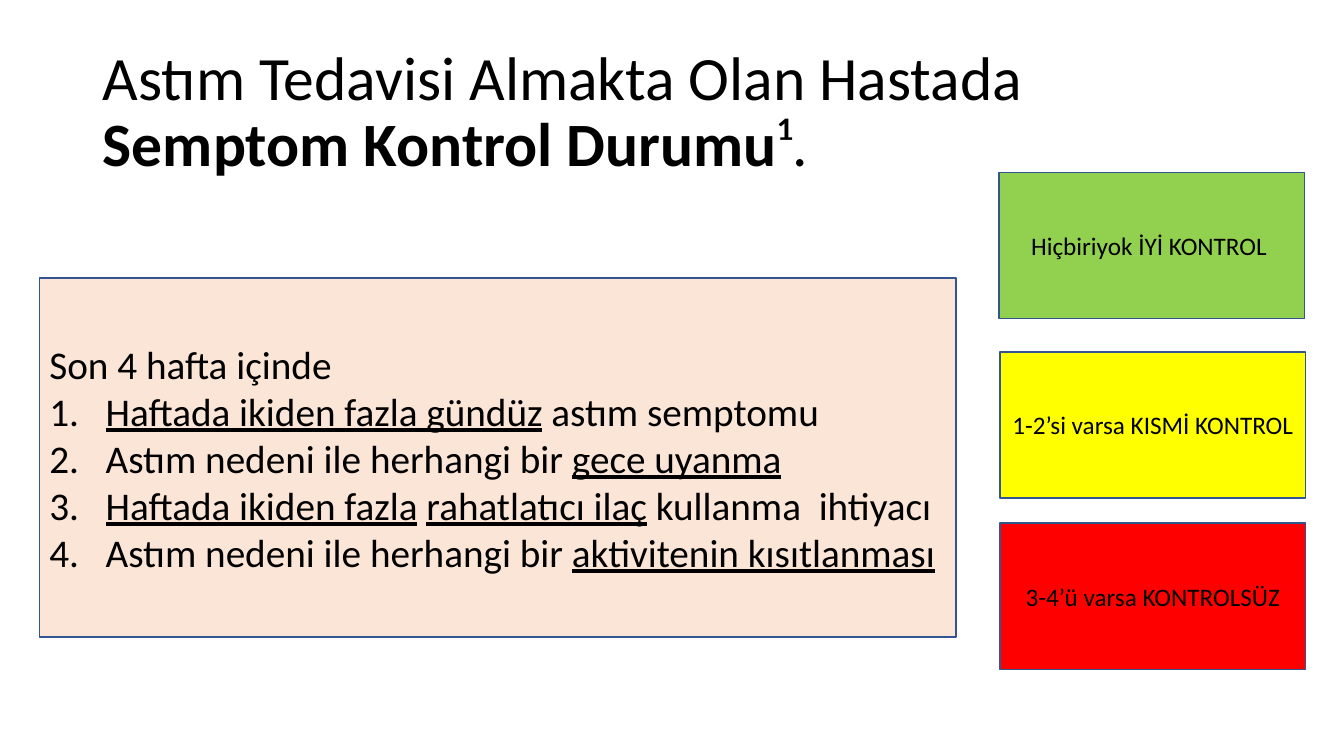
"""Build the asthma symptom control slide."""
import pptx
import pptx.dml.color
import pptx.enum.shapes
import pptx.enum.text
import pptx.oxml
import pptx.oxml.ns
import pptx.util

RGBColor = pptx.dml.color.RGBColor
BLACK = RGBColor(0x00, 0x00, 0x00)
OUTLINE = RGBColor(0x32, 0x54, 0x91)
PEACH = RGBColor(0xFB, 0xE5, 0xD6)
GREEN = RGBColor(0x92, 0xD0, 0x50)
YELLOW = RGBColor(0xFF, 0xFF, 0x00)
RED = RGBColor(0xFF, 0x00, 0x00)

HEADING = [("Astım Tedavisi Almakta Olan Hastada ", ""),
           ("Semptom Kontrol Durumu", "bold"), ("¹.", "")]
INTRO = [("Son 4 hafta içinde", "")]
SYMPTOMS = [
    [("Haftada ikiden fazla gündüz", "underline"), (" astım semptomu", "")],
    [("Astım nedeni ile herhangi bir ", ""), ("gece uyanma", "underline")],
    [("Haftada ikiden fazla", "underline"), (" ", ""),
     ("rahatlatıcı ilaç", "underline"), (" kullanma  ihtiyacı", "")],
    [("Astım nedeni ile herhangi bir ", ""), ("aktivitenin kısıtlanması", "underline")],
]
CONTROL_LEVELS = [
    ("Hiçbiriyok İYİ KONTROL ", GREEN, 9.91, 1.71),
    ("1-2’si varsa KISMİ KONTROL ", YELLOW, 9.92, 3.49),
    ("3-4’ü varsa KONTROLSÜZ", RED, 9.92, 5.19),
]
LEVEL_SIZE = (3.03, 1.45)
HEADING_BOX = (0.92, 0.4, 11.5, 1.45)
SYMPTOM_BOX = (0.39, 2.76, 9.09, 3.56)
NUMBER_INDENT = pptx.util.Inches(0.56)
LEFT = pptx.enum.text.PP_ALIGN.LEFT
CENTER = pptx.enum.text.PP_ALIGN.CENTER
SHAPES = pptx.enum.shapes.MSO_SHAPE


def write(frame, paragraphs, size, align=LEFT, spacing=1.0, numbered_from=None):
    """Fill a text frame with paragraphs made of (text, style) runs."""
    frame.word_wrap = True
    frame.auto_size = pptx.enum.text.MSO_AUTO_SIZE.NONE
    frame.vertical_anchor = pptx.enum.text.MSO_ANCHOR.MIDDLE
    for index, runs in enumerate(paragraphs):
        paragraph = frame.add_paragraph() if index else frame.paragraphs[0]
        paragraph.alignment = align
        paragraph.line_spacing = spacing
        if numbered_from is not None and index >= numbered_from:
            properties = paragraph._p.get_or_add_pPr()
            properties.set("marL", str(NUMBER_INDENT))
            properties.set("indent", str(-NUMBER_INDENT))
            number = pptx.oxml.parse_xml(
                f'<a:buAutoNum {pptx.oxml.ns.nsdecls("a")} type="arabicPeriod"/>')
            properties.append(number)
        for text, style in runs:
            run = paragraph.add_run()
            run.text = text
            run.font.name = "Calibri"
            run.font.size = pptx.util.Pt(size)
            run.font.color.rgb = BLACK
            run.font.bold = style == "bold"
            run.font.underline = style == "underline"


def add_panel(slide, preset, box, fill):
    """Add an outlined, filled panel."""
    panel = slide.shapes.add_shape(preset, *map(pptx.util.Inches, box))
    panel.shadow.inherit = False
    panel.fill.solid()
    panel.fill.fore_color.rgb = fill
    panel.line.color.rgb = OUTLINE
    panel.line.width = pptx.util.Pt(1)
    return panel


def main():
    """Lay out the slide and save it."""
    deck = pptx.Presentation()
    deck.slide_width = pptx.util.Inches(13.33)
    deck.slide_height = pptx.util.Inches(7.5)
    slide = deck.slides.add_slide(deck.slide_layouts.get_by_name("Title Only"))

    heading = slide.shapes.title
    heading.left, heading.top, heading.width, heading.height = map(
        pptx.util.Inches, HEADING_BOX)
    write(heading.text_frame, [HEADING], 44, spacing=0.9)

    symptoms = add_panel(slide, SHAPES.ROUNDED_RECTANGLE, SYMPTOM_BOX, PEACH)
    symptoms.adjustments[0] = 0
    write(symptoms.text_frame, [INTRO] + SYMPTOMS, 28, numbered_from=1)

    for label, fill, left, top in CONTROL_LEVELS:
        level = add_panel(slide, SHAPES.RECTANGLE, (left, top, *LEVEL_SIZE), fill)
        write(level.text_frame, [[(label, "")]], 18, align=CENTER)

    deck.save("out.pptx")


if __name__ == "__main__":
    main()
